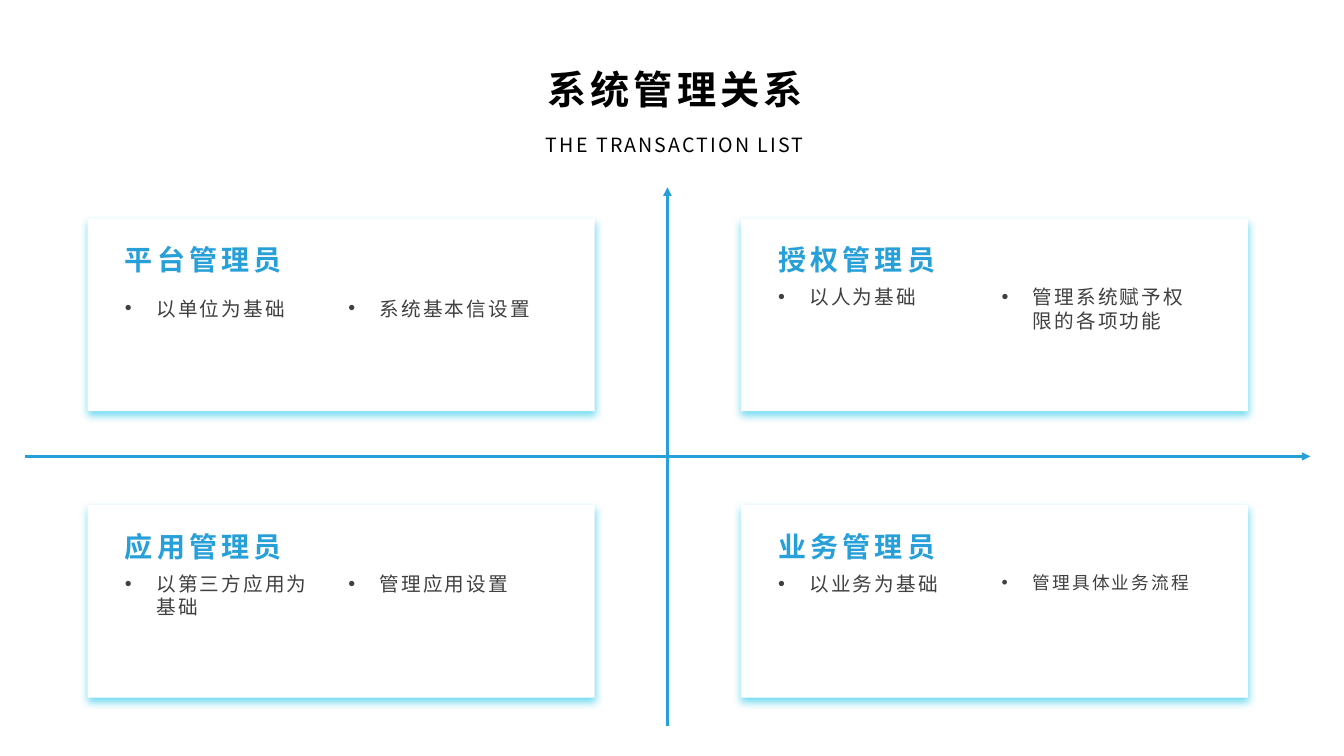
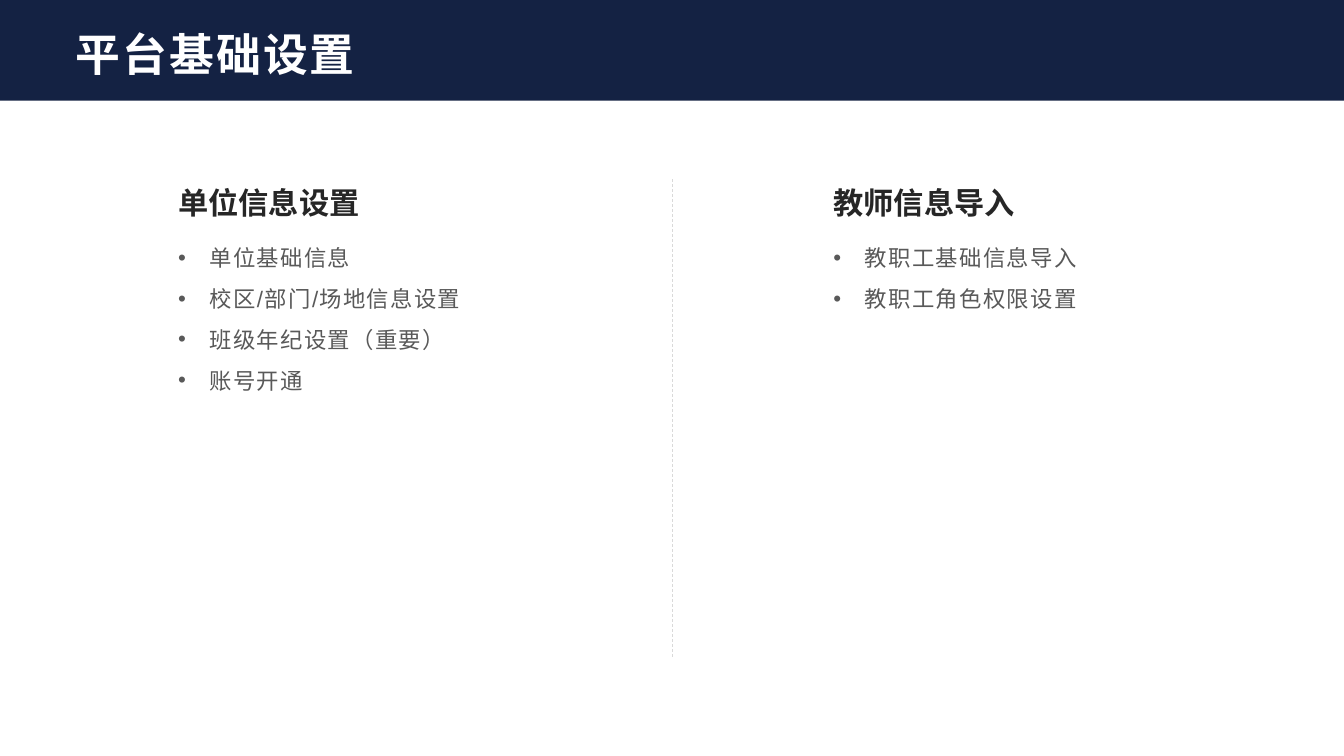
from dataclasses import dataclass

from lxml import etree
from pptx import Presentation
from pptx.dml.color import RGBColor
from pptx.enum.dml import MSO_LINE
from pptx.enum.shapes import MSO_CONNECTOR, MSO_SHAPE
from pptx.enum.text import MSO_ANCHOR, MSO_AUTO_SIZE, PP_ALIGN
from pptx.oxml.ns import qn
from pptx.util import Cm, Pt

STRAIGHT = MSO_CONNECTOR.STRAIGHT
RECTANGLE = MSO_SHAPE.RECTANGLE
TOP, BOTTOM = MSO_ANCHOR.TOP, MSO_ANCHOR.BOTTOM
LEFT, CENTER = PP_ALIGN.LEFT, PP_ALIGN.CENTER
TITLE_ONLY, COMPARISON = 5, 4


@dataclass(frozen=True)
class Style:
    size: float
    color: str
    bold: bool = False
    spacing: float = 0
    font: str = "Noto Sans CJK SC"
    align: int = LEFT
    anchor: int = TOP
    bullet: bool = False
    gap: float = 0
    insets: tuple = (0.25, 0.13, 0.25, 0.13)


class Theme:
    east_asian_font = "Noto Sans CJK SC"
    accent, band, white = "279FD8", "142243", "FFFFFF"
    divider, glow = "D9D9D9", "17C3E7"
    indent = 0.79
    title = Style(28, "000000", True, 3, align=CENTER)
    subtitle = Style(14, "000000", spacing=1.5, align=CENTER)
    card_heading = Style(20, accent, True, 3, anchor=BOTTOM,
                         insets=(0.25, 0.13, 0.25, 0))
    card_item = Style(14, "404040", spacing=1.5, bullet=True)
    card_item_small = Style(12.6, "404040", spacing=1.5, bullet=True)
    band_title = Style(32, white, True, 1.5, "Arial", anchor=BOTTOM,
                       insets=(0.2, 0.1, 0.2, 0.1))
    column_heading = Style(21.6, "262626", True, font="Arial")
    column_item = Style(16, "595959", spacing=1, font="Arial",
                        bullet=True, gap=10)


# Content
RELATIONS_TITLE = "系统管理关系"
RELATIONS_SUBTITLE = "THE TRANSACTION LIST"
# Heading, item offset from the card top, items with their styles
CARDS = [
    ("平台管理员", 1.83, [("以单位为基础", Theme.card_item),
                     ("系统基本信设置", Theme.card_item)]),
    ("授权管理员", 1.55, [("以人为基础", Theme.card_item),
                     ("管理系统赋予权限的各项功能", Theme.card_item)]),
    ("应用管理员", 1.55, [("以第三方应用为基础", Theme.card_item),
                     ("管理应用设置", Theme.card_item)]),
    ("业务管理员", 1.55, [("以业务为基础", Theme.card_item),
                     ("管理具体业务流程", Theme.card_item_small)]),
]
SETTINGS_TITLE = "平台基础设置"
# Left, width, heading, items
COLUMNS = [
    (4.24, 9.65, "单位信息设置",
     ["单位基础信息", "校区/部门/场地信息设置", "班级年纪设置（重要）", "账号开通"]),
    (20.75, 8.26, "教师信息导入",
     ["教职工基础信息导入", "教职工角色权限设置"]),
]

# Layout in centimetres
SLIDE_WIDTH, SLIDE_HEIGHT = 33.87, 19.05
CARD_LEFT, CARD_TOP = 2.21, 5.51
CARD_STEP_X, CARD_STEP_Y = 16.46, 7.22
CARD_WIDTH, CARD_HEIGHT = 12.78, 4.85
CARD_PADDING = 0.69
ITEM_STEP = 5.63
COLUMN_TOP, COLUMN_BOTTOM, LIST_TOP = 4.52, 16.56, 6.02


def lengths(*values):
    return [Cm(value) for value in values]


def add_xml(parent, tag, **attributes):
    return etree.SubElement(parent, qn(tag), attributes)


def format_paragraph(paragraph, style, first):
    paragraph.alignment = style.align
    paragraph.line_spacing = 1.0
    paragraph.space_before = Pt(0 if first else style.gap)
    properties = paragraph._p.get_or_add_pPr()
    indent = Cm(Theme.indent) if style.bullet else 0
    properties.set("marL", str(indent))
    properties.set("indent", str(-indent))
    if style.bullet:
        add_xml(properties, "a:buFont", typeface="Arial")
        add_xml(properties, "a:buChar", char="•")
    else:
        add_xml(properties, "a:buNone")
    font = paragraph.font
    font.size, font.bold, font.name = Pt(style.size), style.bold, style.font
    font.color.rgb = RGBColor.from_string(style.color)
    font._rPr.set("spc", str(int(style.spacing * 100)))
    add_xml(font._rPr, "a:ea", typeface=Theme.east_asian_font)


def write(shape, box, lines, style):
    """Place a text shape and fill it with one paragraph per line."""
    shape.left, shape.top, shape.width, shape.height = lengths(*box)
    frame = shape.text_frame
    frame.word_wrap = True
    frame.auto_size = MSO_AUTO_SIZE.NONE
    frame.vertical_anchor = style.anchor
    (frame.margin_left, frame.margin_top,
     frame.margin_right, frame.margin_bottom) = lengths(*style.insets)
    for index, line in enumerate(lines):
        paragraph = frame.add_paragraph() if index else frame.paragraphs[0]
        paragraph.text = line
        format_paragraph(paragraph, style, index == 0)


def add_text(slide, box, line, style):
    write(slide.shapes.add_textbox(*lengths(*box)), box, [line], style)


def add_rectangle(slide, box, color):
    shape = slide.shapes.add_shape(RECTANGLE, *lengths(*box))
    shape.shadow.inherit = False
    shape.fill.solid()
    shape.fill.fore_color.rgb = RGBColor.from_string(color)
    shape.line.fill.background()
    return shape


def add_glow(shape):
    effects = shape._element.spPr.find(qn("a:effectLst"))
    shadow = add_xml(effects, "a:outerShdw", blurRad=str(Pt(6)),
                     dist=str(Pt(3)), dir="5400000", algn="t",
                     rotWithShape="0")
    color = add_xml(shadow, "a:srgbClr", val=Theme.glow)
    add_xml(color, "a:alpha", val="60000")


def add_line(slide, ends, color, width, arrow=False, dash=None):
    connector = slide.shapes.add_connector(STRAIGHT, *lengths(*ends))
    line = connector.line
    line.color.rgb = RGBColor.from_string(color)
    line.width = Pt(width)
    if dash:
        line.dash_style = dash
    if arrow:
        add_xml(line._get_or_add_ln(), "a:tailEnd", type="triangle")
    add_xml(connector._element.spPr, "a:effectLst")


def add_card(slide, left, top, heading, item_offset, items):
    add_glow(add_rectangle(slide, (left, top, CARD_WIDTH, CARD_HEIGHT),
                           Theme.white))
    text_left = left + CARD_PADDING
    add_text(slide, (text_left, top, 7.49, 1.45), heading,
             Theme.card_heading)
    for index, (item, style) in enumerate(items):
        box = (text_left + index * ITEM_STEP, top + item_offset, 5.59, 2.2)
        add_text(slide, box, item, style)


def build_relations(presentation):
    slide = presentation.slides.add_slide(
        presentation.slide_layouts[TITLE_ONLY])
    write(slide.shapes.title, (1.25, 1.52, 31.52, 1.63),
          [RELATIONS_TITLE], Theme.title)
    add_text(slide, (1.25, 3.23, 31.52, 0.99), RELATIONS_SUBTITLE,
             Theme.subtitle)
    # Axes
    for ends in [(0.64, 11.5, 33.02, 11.5), (16.82, 18.29, 16.82, 4.72)]:
        add_line(slide, ends, Theme.accent, 2, arrow=True)
    # Quadrant cards
    for index, card in enumerate(CARDS):
        row, column = divmod(index, 2)
        add_card(slide, CARD_LEFT + column * CARD_STEP_X,
                 CARD_TOP + row * CARD_STEP_Y, *card)


def build_settings(presentation):
    slide = presentation.slides.add_slide(
        presentation.slide_layouts[COMPARISON])
    # Title band, behind the title
    band = add_rectangle(slide, (0, 0, SLIDE_WIDTH, 2.54), Theme.band)
    slide.shapes._spTree.insert(2, band._element)
    write(slide.shapes.title, (1.7, 0.43, 30.48, 1.7),
          [SETTINGS_TITLE], Theme.band_title)
    # Columns: heading and list placeholders come in pairs
    for index, (left, width, heading, items) in enumerate(COLUMNS):
        heading_id = 1 + 2 * index
        holders = {holder.placeholder_format.idx: holder
                   for holder in slide.placeholders}
        write(holders[heading_id], (left, COLUMN_TOP, width, 1.27),
              [heading], Theme.column_heading)
        write(holders[heading_id + 1],
              (left, LIST_TOP, width, COLUMN_BOTTOM - LIST_TOP),
              items, Theme.column_item)
    middle = SLIDE_WIDTH / 2
    add_line(slide, (middle, COLUMN_TOP, middle, COLUMN_BOTTOM),
             Theme.divider, 0.5, dash=MSO_LINE.DASH)


def main():
    presentation = Presentation()
    presentation.slide_width = Cm(SLIDE_WIDTH)
    presentation.slide_height = Cm(SLIDE_HEIGHT)
    build_relations(presentation)
    build_settings(presentation)
    presentation.save("out.pptx")


if __name__ == "__main__":
    main()
